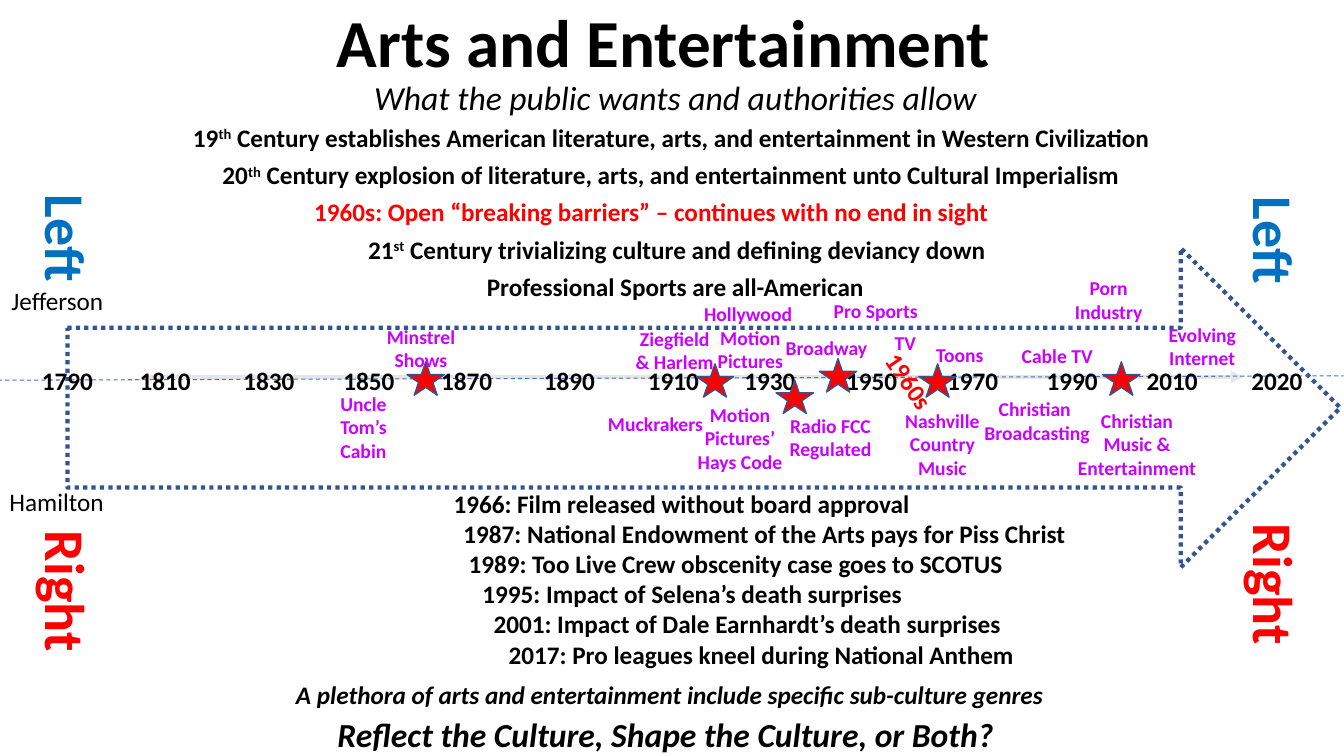
from lxml import etree
from pptx import Presentation
from pptx.dml.color import RGBColor
from pptx.enum import dml, shapes, text
from pptx.oxml.ns import qn
from pptx.util import Cm, Pt

BLACK = RGBColor(0x00, 0x00, 0x00)
RED = RGBColor(0xFF, 0x00, 0x00)
BLUE = RGBColor(0x00, 0x70, 0xC0)
PURPLE = RGBColor(0xCC, 0x00, 0xFF)
NAVY = RGBColor(0x32, 0x54, 0x91)
DASH_BLUE = RGBColor(0x44, 0x72, 0xC4)
GREY = RGBColor(0xE7, 0xE6, 0xE6)
LEFT, CENTER = text.PP_ALIGN.LEFT, text.PP_ALIGN.CENTER
TOP, MIDDLE, BOTTOM = text.MSO_ANCHOR.TOP, text.MSO_ANCHOR.MIDDLE, text.MSO_ANCHOR.BOTTOM

prs = Presentation()
prs.slide_width, prs.slide_height = Cm(33.87), Cm(19.05)
s = prs.slides.add_slide(prs.slide_layouts[6])


def add_label(words, x, y, w, h, size=18, color=BLACK, bold=True, italic=False,
              align=CENTER, anchor=MIDDLE, rotation=0, spacing=None):
    sp = s.shapes.add_textbox(Cm(x), Cm(y), Cm(w), Cm(h))
    sp.rotation = rotation
    tf = sp.text_frame
    tf.word_wrap = True
    tf.vertical_anchor = anchor
    for i, line in enumerate(words.split("\n")):
        p = tf.add_paragraph() if i else tf.paragraphs[0]
        p.alignment = align
        p.line_spacing = spacing
        for j, part in enumerate(line.split("^")):
            r = p.add_run()
            r.text = part
            f = r.font
            f.name, f.size, f.bold, f.italic = "Calibri", Pt(size), bold, italic
            f.color.rgb = color
            if j % 2:
                r._r.get_or_add_rPr().set("baseline", "30000")


def add_line(x1, y1, x2, y2, color, width):
    cx = s.shapes.add_connector(shapes.MSO_CONNECTOR.STRAIGHT, Cm(x1), Cm(y1), Cm(x2), Cm(y2))
    cx.line.color.rgb = color
    cx.line.width = Pt(width)
    etree.SubElement(cx._element.spPr, qn("a:effectLst"))
    return cx


axis = add_line(3.63, 9.5, 31.34, 9.5, GREY, 3)
etree.SubElement(axis.line._get_or_add_ln(), qn("a:tailEnd")).set("type", "triangle")

add_label("Arts and Entertainment ", 4.22, -0.05, 25.4, 2.24, 48, anchor=BOTTOM, spacing=0.9)
add_label("What the public wants and authorities allow", 4.32, 1.93, 25.4, 1.37, 24,
          bold=False, italic=True, anchor=TOP, spacing=0.9)

arrow = s.shapes.add_shape(shapes.MSO_SHAPE.RIGHT_ARROW, Cm(1.7), Cm(6.25), Cm(32.08), Cm(8.05))
arrow.shadow.inherit = False
arrow.fill.background()
arrow.line.color.rgb = NAVY
arrow.line.width = Pt(3)
arrow.line.dash_style = dml.MSO_LINE.ROUND_DOT

midline = add_line(-0.05, 9.58, 33.86, 9.47, DASH_BLUE, 0.75)
midline.line.dash_style = dml.MSO_LINE.DASH

for words, x, y, color in [
    ("Left", -0.1, 5.03, BLUE),
    ("Left", 30.35, 5.08, BLUE),
    ("Right", -0.1, 13.92, RED),
    ("Right", 30.35, 13.74, RED),
]:
    add_label(words, x, y, 3.61, 1.96, 40, color, rotation=90)

add_label("Jefferson", -0.03, 7.06, 2.95, 1.02, bold=False)
add_label("Hamilton", -0.05, 12.12, 2.95, 1.02, bold=False)

years = [*range(1790, 2011, 20), 2020]
year_lefts = [0.66, 3.12, 5.74, 8.26, 10.72, 13.31, 15.93,
              18.36, 20.93, 23.47, 25.98, 28.5, 31.14]
for year, x in zip(years, year_lefts):
    add_label(str(year), x, 9.07, 2.08, 1.02)

for x, y in [(10.26, 9.12), (19.56, 9.58), (20.65, 9.04),
             (17.55, 9.17), (23.16, 9.17), (27.79, 9.12)]:
    star = s.shapes.add_shape(shapes.MSO_SHAPE.STAR_5_POINT, Cm(x), Cm(y), Cm(0.94), Cm(0.84))
    star.shadow.inherit = False
    star.fill.solid()
    star.fill.fore_color.rgb = RED
    star.line.color.rgb = NAVY
    star.line.width = Pt(1)

add_label("1960s", 20.42, 9.09, 5, 1.02, color=RED, rotation=55.6)

event_heights = {1: 0.86, 2: 1.45, 3: 2.06}
for words, x, y, w, lines in [
    ("TV", 21.95, 8.2, 1.73, 1),
    ("Minstrel Shows", 9.25, 8.05, 2.72, 2),
    ("Ziegfield & Harlem", 15.75, 8.1, 2.51, 2),
    ("Christian Music & Entertainment", 26.9, 10.16, 3.51, 3),
    ("Broadway", 19.23, 8.33, 3.2, 1),
    ("Cable TV", 25.35, 8.53, 2.59, 1),
    ("Muckrakers ", 14.76, 10.24, 3.63, 1),
    ("Evolving Internet", 28.98, 8, 2.64, 2),
    ("Toons", 22.4, 8.51, 3.58, 1),
    ("Hollywood \nMotion Pictures", 17.27, 7.47, 3.28, 3),
    ("Uncle Tom’s Cabin", 7.8, 9.73, 2.72, 3),
    ("Nashville\nCountry Music", 22.25, 10.16, 3, 3),
    ("Christian \nBroadcasting", 24.13, 9.88, 4.01, 2),
    ("Motion Pictures’\nHays Code", 16.81, 10.01, 3.68, 3),
    ("Radio FCC Regulated", 19.61, 10.29, 2.64, 2),
    ("Pro Sports", 20.47, 7.39, 3.2, 1),
    ("Porn Industry", 26.34, 6.83, 3.2, 2),
]:
    add_label(words, x, y, w, event_heights[lines], 14, PURPLE)

for i, (words, x, w, color, align) in enumerate([
    ("19^th^ Century establishes American literature, arts, and entertainment in Western Civilization",
     2.36, 29.13, BLACK, CENTER),
    (" 20^th^ Century explosion of literature, arts, and entertainment unto Cultural Imperialism ",
     4.8, 24.23, BLACK, CENTER),
    ("1960s: Open “breaking barriers” – continues with no end in sight", 7.67, 18.57, RED, LEFT),
    (" 21^st^ Century trivializing culture and defining deviancy down", 8.48, 17.02, BLACK, CENTER),
    ("Professional Sports are all-American", 10.06, 13.92, BLACK, CENTER),
]):
    add_label(words, x, 2.95 + 0.94 * i, w, 1.02, color=color, align=align)

for i, (words, x, w) in enumerate([
    ("1966: Film released without board approval", 11.18, 18.14),
    ("1987: National Endowment of the Arts pays for Piss Christ", 11.43, 18.14),
    ("1989: Too Live Crew obscenity case goes to SCOTUS", 11.56, 14.4),
    ("1995: Impact of Selena’s death surprises", 11.91, 14.4),
    ("2001: Impact of Dale Earnhardt’s death surprises", 12.19, 14.4),
    ("2017: Pro leagues kneel during National Anthem", 12.57, 13.92),
]):
    add_label(words, x, 12.17 + 0.76 * i, w, 1.02, align=LEFT)

add_label("A plethora of arts and entertainment include specific sub-culture genres ",
          6.83, 16.99, 20.24, 1.02, italic=True)
add_label("Reflect the Culture, Shape the Culture, or Both? ", 2.67, 17.86, 28.4, 1.27, 24,
          italic=True, anchor=TOP)

prs.save("out.pptx")
